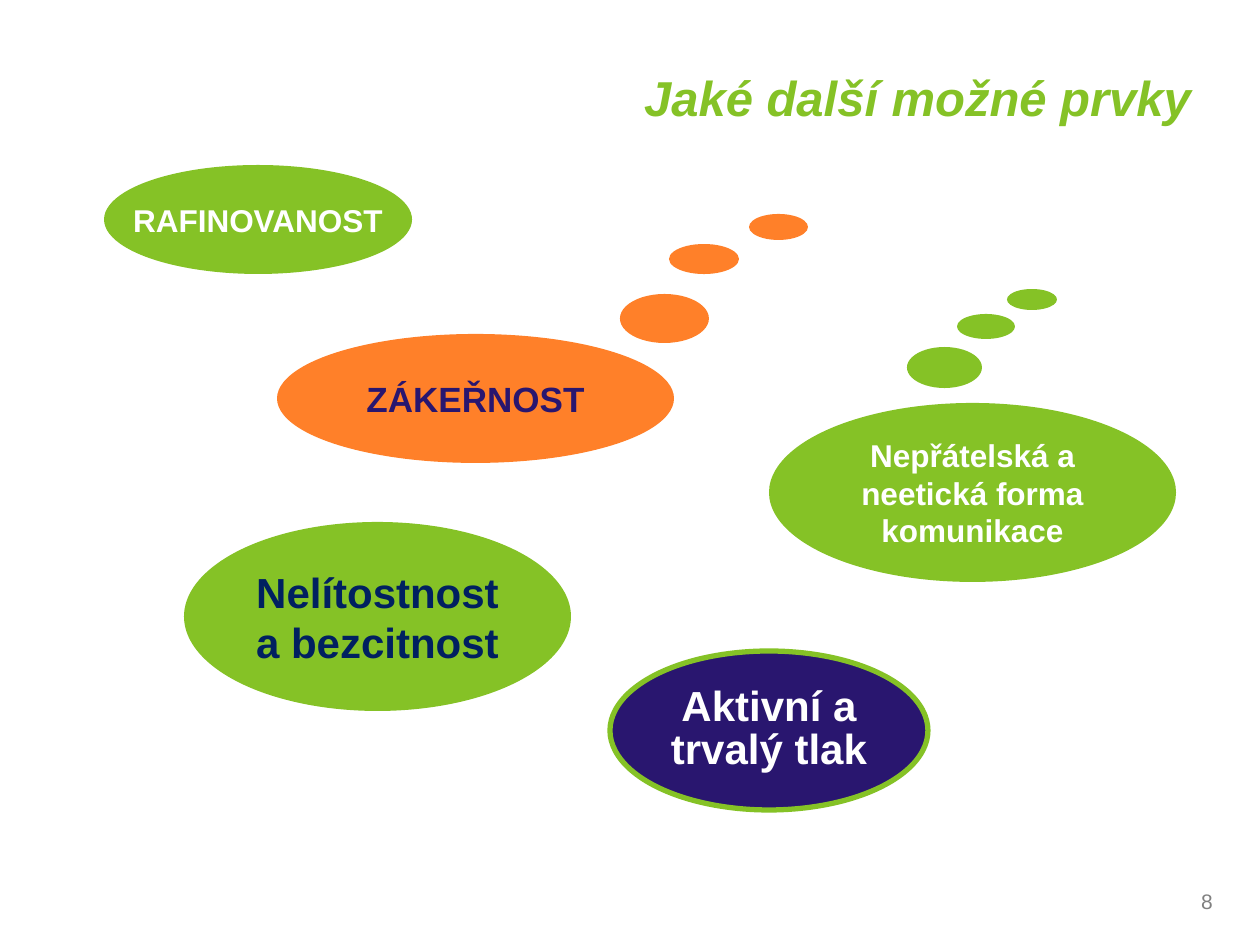
from pptx import Presentation
from pptx.dml.color import RGBColor
from pptx.enum.shapes import MSO_SHAPE
from pptx.enum.text import MSO_ANCHOR, PP_ALIGN
from pptx.util import Emu, Pt

ELLIPSE = MSO_SHAPE.OVAL
MIDDLE = MSO_ANCHOR.MIDDLE
CENTER, RIGHT = PP_ALIGN.CENTER, PP_ALIGN.RIGHT
PX_PER_INCH = 126
FONT = "Arial"
GREEN, ORANGE, VIOLET = "85C226", "FF8029", "29166F"
NAVY, WHITE, GRAY = "002060", "FFFFFF", "808080"

ORANGE_BUBBLES = [(620, 294, 89, 49), (669, 244, 70, 30), (749, 214, 59, 26)]
GREEN_BUBBLES = [(907, 347, 75, 41), (957, 314, 58, 25), (1007, 289, 50, 21)]


def px(n):
    """Turn pixels into EMU."""
    return Emu(round(n * 914400 / PX_PER_INCH))


def rgb(value):
    """Turn a hex string into a colour."""
    return RGBColor.from_string(value)


def set_text(sp, text, size, color, bold=True, italic=False, align=CENTER,
             wrap=True, spacing=None):
    """Write one formatted paragraph into a shape."""
    tf = sp.text_frame
    tf.word_wrap = wrap
    tf.vertical_anchor = MIDDLE
    p = tf.paragraphs[0]
    p.alignment = align
    p.line_spacing = spacing
    r = p.add_run()
    r.text = text
    r.font.name = FONT
    r.font.size = Pt(size)
    r.font.bold = bold
    r.font.italic = italic
    r.font.color.rgb = rgb(color)


def add_label(s, box, text, size, color, **fmt):
    """Add a text box."""
    sp = s.shapes.add_textbox(*map(px, box))
    set_text(sp, text, size, color, **fmt)


def add_ellipse(s, box, fill, line=None):
    """Add a filled ellipse with an optional outline."""
    sp = s.shapes.add_shape(ELLIPSE, *map(px, box))
    sp.shadow.inherit = False
    sp.fill.solid()
    sp.fill.fore_color.rgb = rgb(fill)
    if line:
        sp.line.color.rgb = rgb(line)
        sp.line.width = Pt(3)
    else:
        sp.line.fill.background()
    return sp


def add_bubbles(s, boxes, fill):
    """Add a trail of small ellipses."""
    for box in boxes:
        add_ellipse(s, box, fill)


def main():
    """Build the slide and save it."""
    prs = Presentation()
    prs.slide_width, prs.slide_height = px(1260), px(945)
    s = prs.slides.add_slide(prs.slide_layouts[6])

    add_label(s, (931, 876, 294, 50), "8", 12, GRAY, bold=False, align=RIGHT)
    add_label(s, (610, 58, 615, 77), "Jaké další možné prvky", 28, GREEN,
              italic=True, wrap=False)

    sp = add_ellipse(s, (769, 403, 407, 179), GREEN)
    set_text(sp, "Nepřátelská a neetická forma komunikace", 18, WHITE)
    sp = add_ellipse(s, (184, 522, 387, 189), GREEN)
    set_text(sp, "Nelítostnost a bezcitnost", 24, NAVY)
    sp = add_ellipse(s, (277, 334, 397, 129), ORANGE)
    set_text(sp, "ZÁKEŘNOST", 20, VIOLET)
    add_bubbles(s, ORANGE_BUBBLES, ORANGE)
    sp = add_ellipse(s, (104, 165, 308, 109), GREEN)
    set_text(sp, "RAFINOVANOST", 18, WHITE, wrap=False)
    sp = add_ellipse(s, (610, 651, 318, 159), VIOLET, line=GREEN)
    set_text(sp, "Aktivní a trvalý tlak", 24, WHITE, spacing=0.85)
    add_bubbles(s, GREEN_BUBBLES, GREEN)

    prs.save("out.pptx")


if __name__ == "__main__":
    main()
